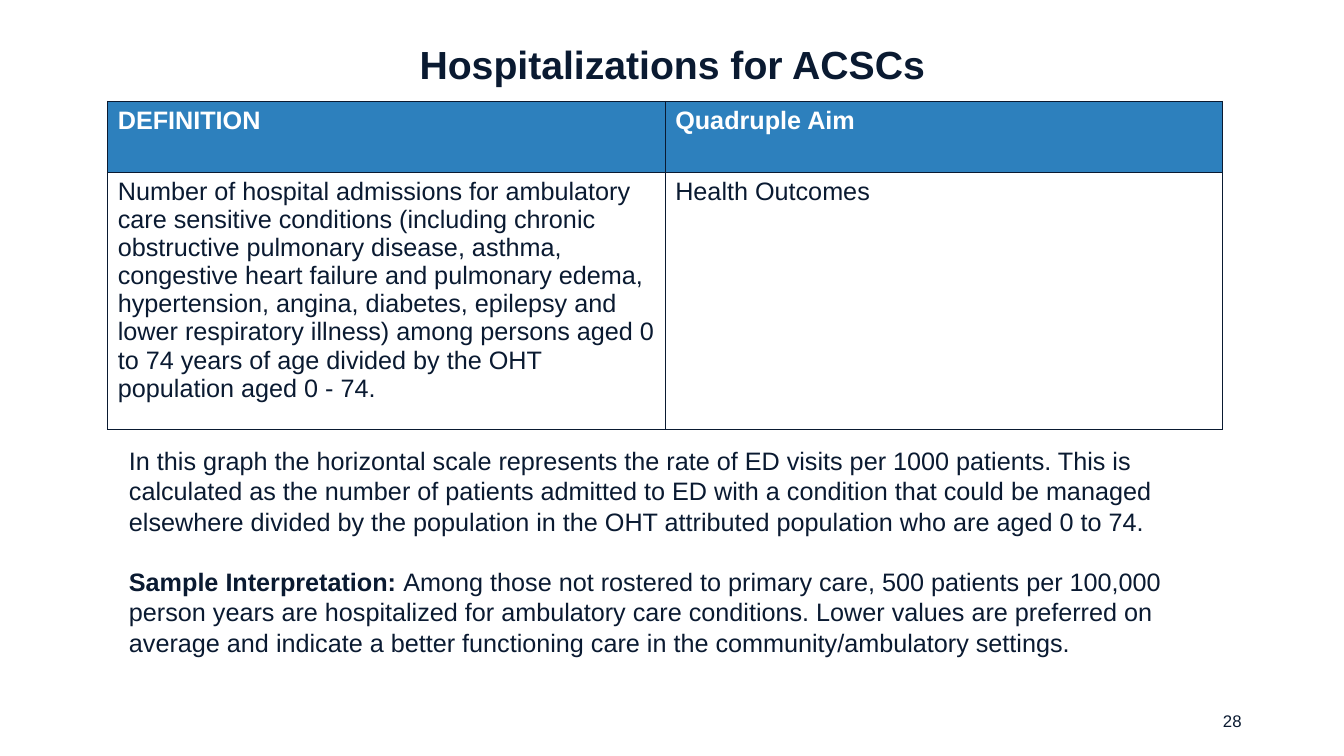
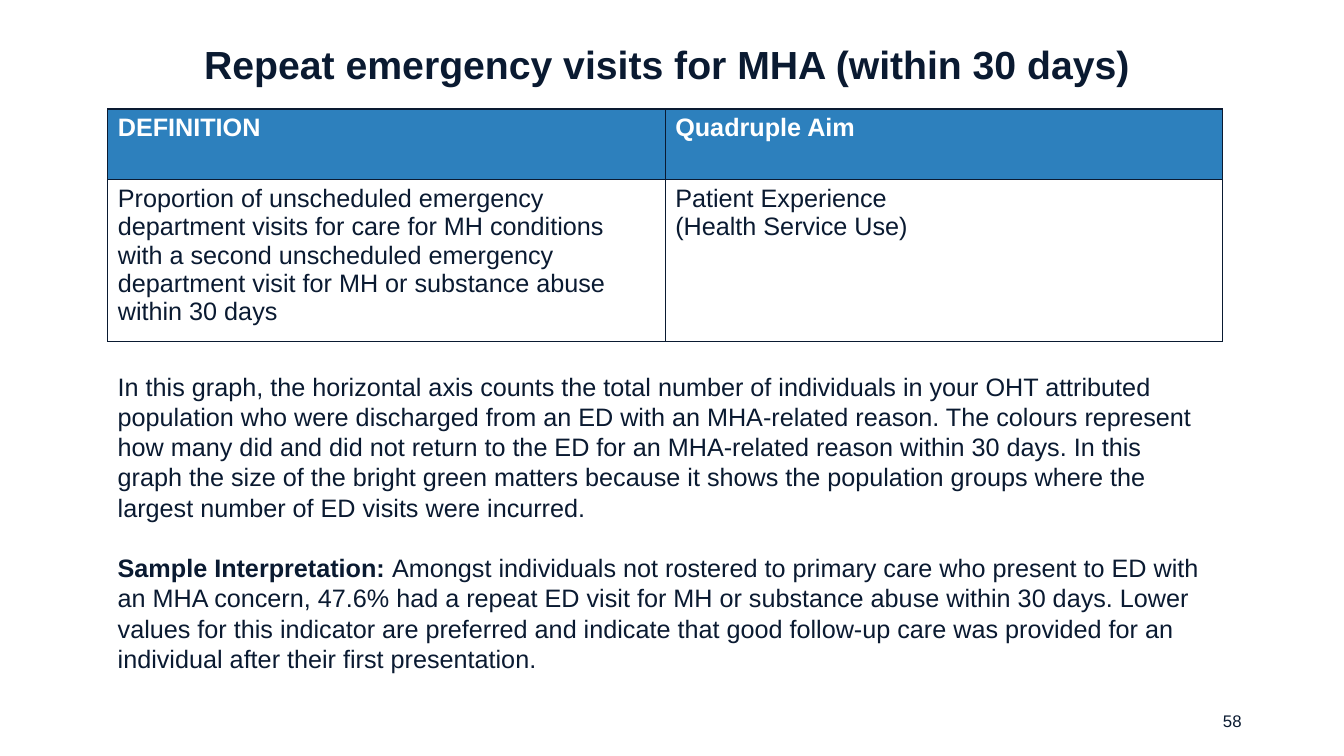
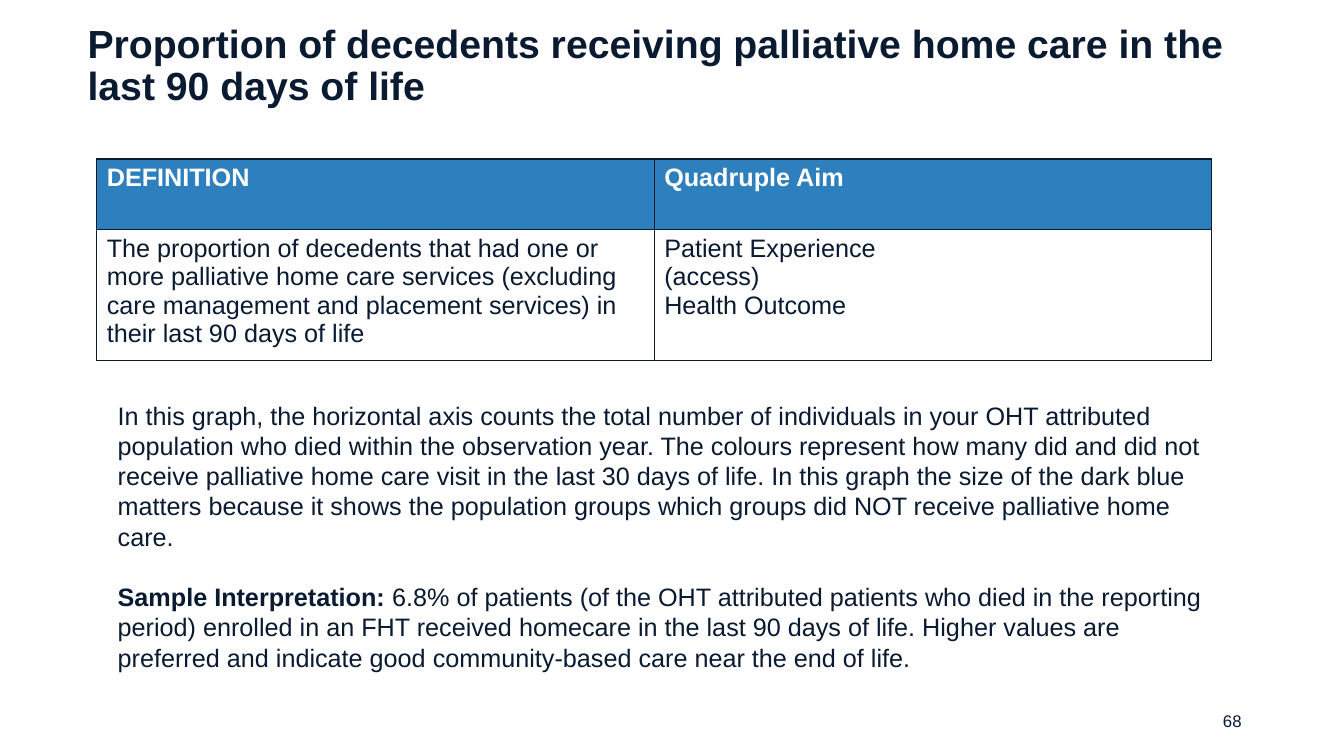
from lxml import etree
from pptx import Presentation
from pptx import util as u
from pptx.dml.color import RGBColor
from pptx.enum import text
from pptx.oxml.ns import qn

INK = "0A1A31"
BLUE = "2D80BD"
WHITE = "FFFFFF"
FONT = "Arial"
TABLE_WIDTH = 796.4
HEADER_HEIGHT = 50.6
HEADINGS = ["DEFINITION", "Quadruple Aim"]
BODY_LINE = 21.6
CELL_LINE = 20.15
TITLE_LINE = 30.2


def colour(value):
    return RGBColor.from_string(value)


def add_text(para, content, size=18, bold=False, ink=INK, line=None, before=0,
             align=text.PP_ALIGN.LEFT):
    para.alignment = align
    para.space_before = u.Pt(before)
    if line:
        para.line_spacing = u.Pt(line)
    span = para.add_run()
    span.text = content
    span.font.name = FONT
    span.font.size = u.Pt(size)
    span.font.bold = bold
    span.font.color.rgb = colour(ink)


def add_box(page, left, top, width, height):
    box = page.shapes.add_textbox(u.Pt(left), u.Pt(top), u.Pt(width), u.Pt(height))
    box.text_frame.word_wrap = True
    return box.text_frame


def set_title(page, content, align):
    title = page.shapes.title
    title.left, title.top = u.Pt(55.4), u.Pt(17.3)
    title.width, title.height = u.Pt(849.6), u.Pt(60.5)
    frame = title.text_frame
    frame.word_wrap = True
    frame.auto_size = text.MSO_AUTO_SIZE.NONE
    frame.vertical_anchor = text.MSO_ANCHOR.MIDDLE
    add_text(frame.paragraphs[0], content, size=28, bold=True, line=TITLE_LINE, align=align)


def add_number(page, number):
    frame = add_box(page, 678, 500.4, 216, 28.8)
    frame.vertical_anchor = text.MSO_ANCHOR.MIDDLE
    add_text(frame.paragraphs[0], str(number), size=12, align=text.PP_ALIGN.RIGHT)


def add_borders(cell):
    properties = cell._tc.get_or_add_tcPr()
    for side in ("lnL", "lnR", "lnT", "lnB"):
        edge = etree.SubElement(properties, qn("a:" + side), w=str(u.Pt(1)))
        fill = etree.SubElement(edge, qn("a:solidFill"))
        etree.SubElement(fill, qn("a:srgbClr"), val=INK)


def fill_cell(cell, lines, fill, **style):
    add_borders(cell)
    cell.fill.solid()
    cell.fill.fore_color.rgb = colour(fill)
    frame = cell.text_frame
    for index, content in enumerate(lines):
        para = frame.add_paragraph() if index else frame.paragraphs[0]
        add_text(para, content, line=CELL_LINE, **style)


def add_definition(page, left, top, row_height, definition, aims):
    table = page.shapes.add_table(2, 2, u.Pt(left), u.Pt(top), u.Pt(TABLE_WIDTH),
                                  u.Pt(HEADER_HEIGHT + row_height)).table
    table.horz_banding = False
    table.rows[0].height = u.Pt(HEADER_HEIGHT)
    table.rows[1].height = u.Pt(row_height)
    for column, lines in enumerate([[definition], aims]):
        fill_cell(table.cell(0, column), [HEADINGS[column]], BLUE, bold=True, ink=WHITE)
        fill_cell(table.cell(1, column), lines, WHITE)


def add_explanation(page, place, reading, sample):
    frame = add_box(page, *place)
    add_text(frame.paragraphs[0], reading, line=BODY_LINE)
    para = frame.add_paragraph()
    add_text(para, "Sample Interpretation: ", bold=True, line=BODY_LINE, before=BODY_LINE)
    add_text(para, sample, line=BODY_LINE, before=BODY_LINE)


INDICATORS = [
    dict(
        number=28,
        title="Hospitalizations for ACSCs",
        align=text.PP_ALIGN.CENTER,
        table=(77, 72.4, 184),
        definition="Number of hospital admissions for ambulatory care sensitive conditions "
                   "(including chronic obstructive pulmonary disease, asthma, congestive heart "
                   "failure and pulmonary edema, hypertension, angina, diabetes, epilepsy and "
                   "lower respiratory illness) among persons aged 0 to 74 years of age divided "
                   "by the OHT population aged 0 - 74.",
        aims=["Health Outcomes"],
        place=(85, 314.6, 790.6, 159.8),
        reading="In this graph the horizontal scale represents the rate of ED visits per 1000 "
                "patients. This is calculated as the number of patients admitted to ED with a "
                "condition that could be managed elsewhere divided by the population in the OHT "
                "attributed population who are aged 0 to 74.",
        sample="Among those not rostered to primary care, 500 patients per 100,000 person years "
               "are hospitalized for ambulatory care conditions. Lower values are preferred on "
               "average and indicate a better functioning care in the community/ambulatory "
               "settings.",
    ),
    dict(
        number=58,
        title="Repeat emergency visits for MHA (within 30 days) ",
        align=text.PP_ALIGN.CENTER,
        table=(77, 77.9, 115.6),
        definition="Proportion of unscheduled emergency department visits for care for MH "
                   "conditions with a second unscheduled emergency department visit for MH or "
                   "substance abuse within 30 days",
        aims=["Patient Experience", "(Health Service Use)"],
        place=(77, 261.4, 796.4, 225.4),
        reading="In this graph, the horizontal axis counts the total number of individuals in "
                "your OHT attributed population who were discharged from an ED with an "
                "MHA-related reason. The colours represent how many did and did not return to "
                "the ED for an MHA-related reason within 30 days. In this graph the size of the "
                "bright green matters because it shows the population groups where "
                "the largest number of ED visits were incurred.",
        sample="Amongst individuals not rostered to primary care who present to ED with an MHA "
               "concern, 47.6% had a repeat ED visit for MH or substance abuse within 30 days. "
               "Lower values for this indicator are preferred and indicate that good follow-up "
               "care was provided for an individual after their first presentation.",
    ),
    dict(
        number=68,
        title="Proportion of decedents receiving palliative home care in the last 90 days of life",
        align=text.PP_ALIGN.LEFT,
        table=(69.1, 113.6, 93.4),
        definition="The proportion of decedents that had one or more palliative home care "
                   "services (excluding care management and placement services) in their last "
                   "90 days of life",
        aims=["Patient Experience", "(access)", "Health Outcome"],
        place=(77, 282.2, 788.4, 203.8),
        reading="In this graph, the horizontal axis counts the total number of individuals in "
                "your OHT attributed population who died within the observation year. "
                "The colours represent how many did and did not receive palliative home care "
                "visit in the last 30 days of life. In this graph the size of the dark "
                "blue matters because it shows the population groups which groups did NOT "
                "receive palliative home care.",
        sample="6.8% of patients (of the OHT attributed patients who died in the reporting "
               "period) enrolled in an FHT received homecare in the last 90 days of life. "
               "Higher values are preferred and indicate good community-based care near the "
               "end of life.",
    ),
]


def main():
    deck = Presentation()
    deck.slide_width, deck.slide_height = u.Pt(960), u.Pt(540)
    for item in INDICATORS:
        page = deck.slides.add_slide(deck.slide_layouts[5])
        add_number(page, item["number"])
        set_title(page, item["title"], item["align"])
        add_definition(page, *item["table"], item["definition"], item["aims"])
        add_explanation(page, item["place"], item["reading"], item["sample"])
    deck.save("out.pptx")


if __name__ == "__main__":
    main()
